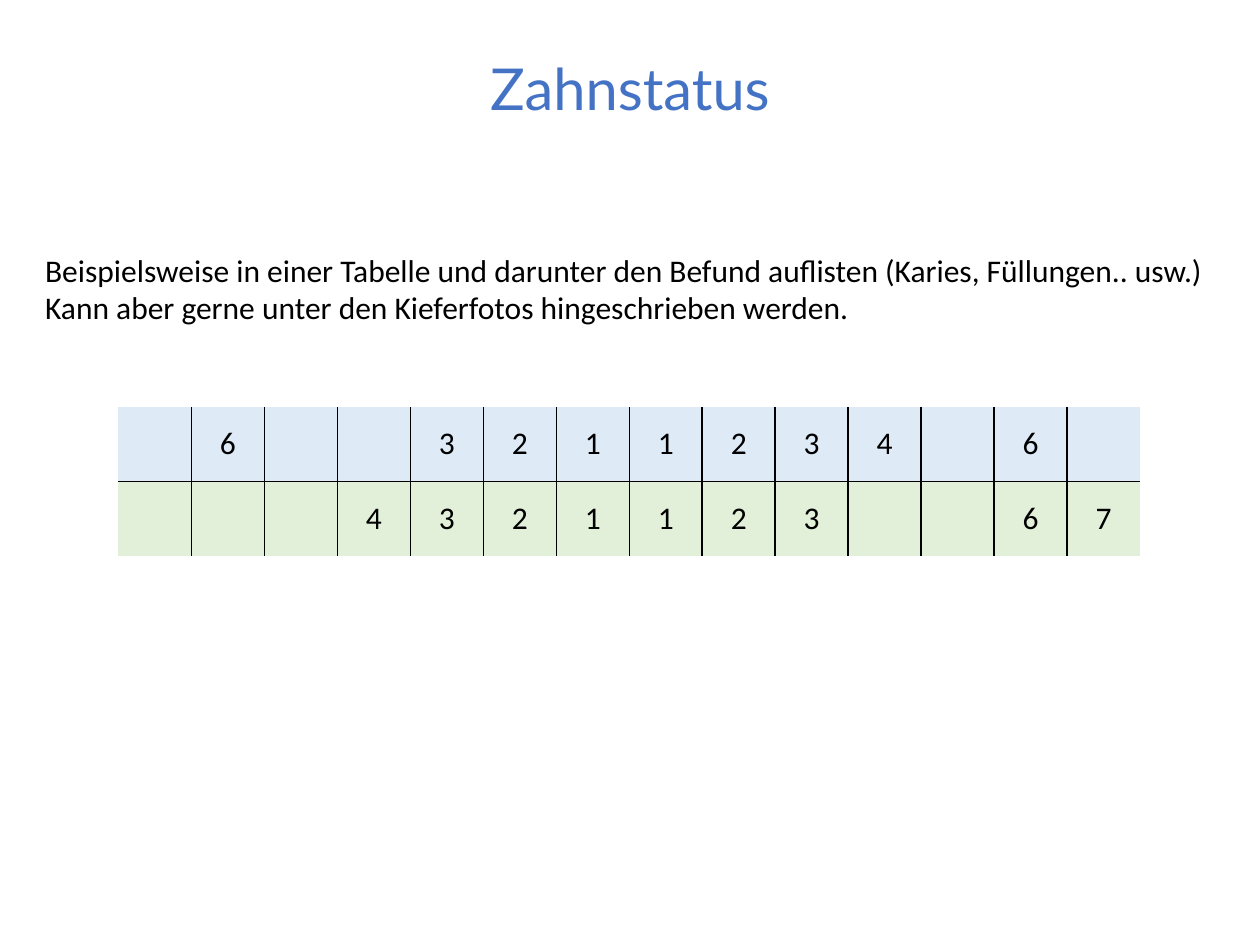
from lxml.etree import SubElement
from pptx import Presentation
from pptx.dml.color import RGBColor
from pptx.enum.text import MSO_ANCHOR, PP_ALIGN
from pptx.oxml.ns import qn
from pptx.util import Inches, Pt

COLORS = {
    "title": "4472C4",
    "text": "000000",
    "border": "000000",
    "upper_jaw": "DEEBF7",
    "lower_jaw": "E2F0D9",
}
TEETH = [
    ("upper_jaw", ["", "6", "", "", "3", "2", "1", "1", "2", "3", "4", "", "6", ""]),
    ("lower_jaw", ["", "", "", "4", "3", "2", "1", "1", "2", "3", "", "", "6", "7"]),
]


def format_text(paragraph, font_name, size, color):
    for run in paragraph.runs:
        run.font.name = font_name
        run.font.size = Pt(size)
        run.font.color.rgb = RGBColor.from_string(COLORS[color])


def add_border(cell, side, visible):
    properties = cell._tc.get_or_add_tcPr()
    line = SubElement(properties, qn(f"a:ln{side}"), w=str(Pt(1)))
    if visible:
        fill = SubElement(line, qn("a:solidFill"))
        SubElement(fill, qn("a:srgbClr"), val=COLORS["border"])
    else:
        SubElement(line, qn("a:noFill"))


presentation = Presentation()
presentation.slide_width = Inches(10)
presentation.slide_height = Inches(7.5)
slide = presentation.slides.add_slide(presentation.slide_layouts[6])

title = slide.shapes.add_textbox(Inches(0.69), Inches(0), Inches(8.62), Inches(1.45))
title.text_frame.word_wrap = True
title.text_frame.vertical_anchor = MSO_ANCHOR.MIDDLE
title.text_frame.text = "Zahnstatus"
title_paragraph = title.text_frame.paragraphs[0]
title_paragraph.alignment = PP_ALIGN.CENTER
title_paragraph.line_spacing = 0.9
format_text(title_paragraph, "Lato", 33, "title")

row_count, column_count = len(TEETH), len(TEETH[0][1])
table = slide.shapes.add_table(
    row_count, column_count, Inches(0.94), Inches(3.23), Inches(8.11), Inches(1.18)
).table
table.first_row = False
table.horz_banding = False

for row, (jaw, teeth) in enumerate(TEETH):
    for column, tooth in enumerate(teeth):
        cell = table.cell(row, column)
        add_border(cell, "L", column > 0)
        add_border(cell, "R", column < column_count - 1)
        add_border(cell, "T", row > 0)
        add_border(cell, "B", row < row_count - 1)
        cell.fill.solid()
        cell.fill.fore_color.rgb = RGBColor.from_string(COLORS[jaw])
        cell.vertical_anchor = MSO_ANCHOR.MIDDLE
        if tooth:
            cell.text_frame.text = tooth
            paragraph = cell.text_frame.paragraphs[0]
            paragraph.alignment = PP_ALIGN.CENTER
            format_text(paragraph, "Calibri", 18, "text")

note = slide.shapes.add_textbox(Inches(0.26), Inches(1.94), Inches(9.51), Inches(0.71))
note.text_frame.word_wrap = False
note.text_frame.text = (
    "Beispielsweise in einer Tabelle und darunter den Befund auflisten (Karies, Füllungen.. usw.)\n"
    "Kann aber gerne unter den Kieferfotos hingeschrieben werden."
)
for paragraph in note.text_frame.paragraphs:
    format_text(paragraph, "Calibri", 18, "text")

presentation.save("out.pptx")
